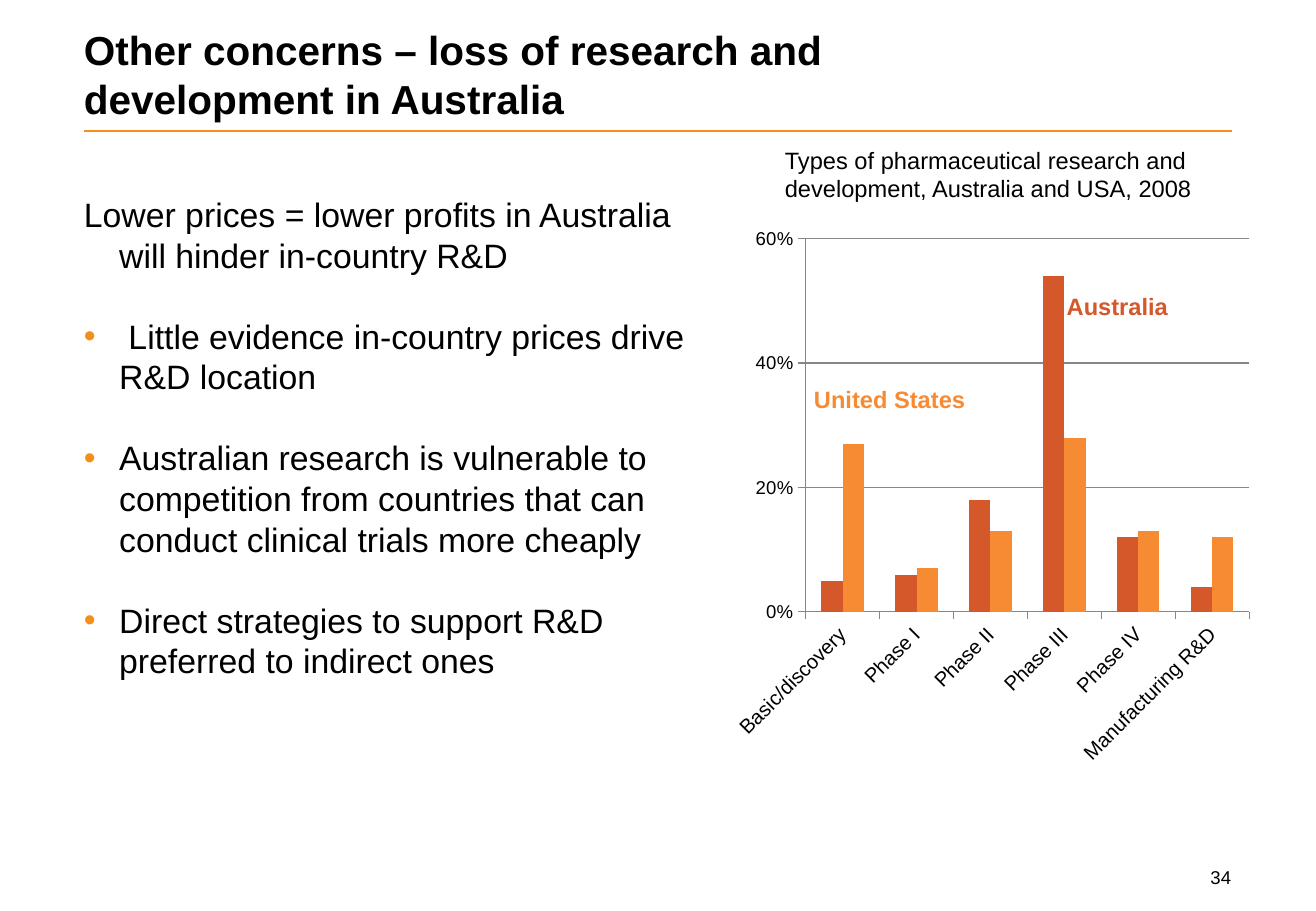
from dataclasses import dataclass

from lxml.etree import SubElement
from pptx import Presentation
from pptx.chart.data import CategoryChartData
from pptx.dml.color import RGBColor
from pptx.enum.chart import XL_CHART_TYPE, XL_TICK_MARK
from pptx.enum.shapes import MSO_CONNECTOR
from pptx.enum.text import MSO_ANCHOR, PP_ALIGN
from pptx.oxml.ns import qn
from pptx.slide import Slide
from pptx.text.text import TextFrame, _Paragraph
from pptx.util import Inches, Pt

FONT = "Arial"
BLACK = RGBColor(0x00, 0x00, 0x00)
GOLD = RGBColor(0xF3, 0x90, 0x1D)
RUST = RGBColor(0xD4, 0x58, 0x2A)
ORANGE = RGBColor(0xF6, 0x8B, 0x33)
GREY = RGBColor(0x87, 0x87, 0x87)

Box = tuple[float, float, float, float]


@dataclass(frozen=True)
class Label:
    text: str
    box: Box
    size: float = 14
    color: RGBColor = BLACK
    bold: bool = False
    align: PP_ALIGN = PP_ALIGN.LEFT


@dataclass(frozen=True)
class Country:
    name: str
    shares: tuple[float, ...]
    color: RGBColor


LABELS = [
    Label("34", (9.28, 7.08, 0.95, 0.29), size=11, align=PP_ALIGN.RIGHT),
    Label("Australia", (8.68, 2.35, 1.78, 0.41), color=RUST, bold=True),
    Label("United States", (6.6, 3.12, 1.78, 0.41), color=ORANGE, bold=True),
    Label("Types of pharmaceutical research and development, Australia and USA, 2008",
          (6.36, 1.15, 3.78, 0.57)),
]
LEAD = "Lower prices = lower profits in Australia will hinder in-country R&D"
BULLETS = [
    " Little evidence in-country prices drive R&D location",
    "Australian research is vulnerable to competition from countries that can "
    "conduct clinical trials more cheaply",
    "Direct strategies to support R&D preferred to indirect ones",
]
STAGES = ["Basic/discovery", "Phase I", "Phase II", "Phase III", "Phase IV",
          "Manufacturing R&D"]
COUNTRIES = [
    Country("Australia", (0.05, 0.06, 0.18, 0.54, 0.12, 0.04), RUST),
    Country("United States", (0.27, 0.07, 0.13, 0.28, 0.13, 0.12), ORANGE),
]


def inches(box: Box) -> list[Inches]:
    return [Inches(v) for v in box]


def write(p: _Paragraph, text: str, *, size: float, color: RGBColor = BLACK,
          bold: bool = False, align: PP_ALIGN = PP_ALIGN.LEFT) -> None:
    p.alignment = align
    r = p.add_run()
    r.text = text
    r.font.name = FONT
    r.font.size = Pt(size)
    r.font.bold = bold
    r.font.color.rgb = color


def set_margins(tf: TextFrame, left: float, top: float, right: float, bottom: float) -> None:
    tf.margin_left, tf.margin_top, tf.margin_right, tf.margin_bottom = inches(
        (left, top, right, bottom))


def add_text_frame(slide: Slide, box: Box) -> TextFrame:
    tf = slide.shapes.add_textbox(*inches(box)).text_frame
    tf.word_wrap = True
    return tf


def add_title(slide: Slide, text: str) -> None:
    sp = slide.shapes.title
    sp.left, sp.top, sp.width, sp.height = inches((0.69, 0.2, 7.56, 0.81))
    tf = sp.text_frame
    tf.word_wrap = True
    tf.vertical_anchor = MSO_ANCHOR.BOTTOM
    set_margins(tf, 0, 0, 0, 0)
    write(tf.paragraphs[0], text, size=24, bold=True)


def add_rule(slide: Slide) -> None:
    line = slide.shapes.add_connector(
        MSO_CONNECTOR.STRAIGHT, *inches((0.69, 1.08, 10.14, 1.08)))
    line.line.color.rgb = GOLD
    line.line.width = Pt(1.5)
    SubElement(line._element.spPr, qn("a:effectLst"))


def hang(p: _Paragraph, bullet: bool) -> None:
    """Give the paragraph a hanging indent and, if asked, a gold bullet."""
    pPr = p._p.get_or_add_pPr()
    pPr.set("marL", str(Inches(0.29)))
    pPr.set("indent", str(-Inches(0.29)))
    if bullet:
        color = SubElement(pPr, qn("a:buClr"))
        SubElement(color, qn("a:srgbClr"), val=str(GOLD))
        SubElement(pPr, qn("a:buFont"), typeface=FONT)
        SubElement(pPr, qn("a:buChar"), char="•")


def add_body(slide: Slide) -> None:
    tf = add_text_frame(slide, (0.69, 1.55, 5.12, 4.2))
    set_margins(tf, 0, 0.05, 0.1, 0.05)
    for i, text in enumerate([LEAD, *BULLETS]):
        p = tf.add_paragraph() if i else tf.paragraphs[0]
        hang(p, bullet=i > 0)
        p.line_spacing = Pt(24)
        if i:
            p.space_before = Pt(24)
        write(p, text, size=20)


def add_chart(slide: Slide) -> None:
    data = CategoryChartData(number_format="0%")
    data.categories = STAGES
    for country in COUNTRIES:
        data.add_series(country.name, country.shares)
    chart = slide.shapes.add_chart(
        XL_CHART_TYPE.COLUMN_CLUSTERED, *inches((5.97, 1.78, 4.4, 4.59)), data).chart
    chart.has_legend = False
    chart.has_title = False
    chart.font.name = FONT
    chart.font.size = Pt(10)
    chart.font.color.rgb = BLACK

    plot = chart.plots[0]
    plot.gap_width = 150
    plot.overlap = 0
    plot.vary_by_categories = False
    for series, country in zip(plot.series, COUNTRIES):
        series.format.fill.solid()
        series.format.fill.fore_color.rgb = country.color

    for axis, size in ((chart.category_axis, 12), (chart.value_axis, 11)):
        axis.major_tick_mark = XL_TICK_MARK.OUTSIDE
        axis.format.line.color.rgb = GREY
        font = axis.tick_labels.font
        font.name, font.size = FONT, Pt(size)
        font.color.rgb = BLACK
    chart.category_axis._element.txPr.bodyPr.set("rot", str(-45 * 60000))

    values = chart.value_axis
    values.minimum_scale, values.maximum_scale, values.major_unit = 0, 0.6, 0.2
    values.tick_labels.number_format = "0%"
    values.tick_labels.number_format_is_linked = False
    values.has_major_gridlines = True
    values.major_gridlines.format.line.color.rgb = GREY

    area = chart._chartSpace.chart.plotArea
    layout = area.find(qn("c:layout"))
    if layout is None:
        layout = SubElement(area, qn("c:layout"))
        area.insert(0, layout)
    manual = SubElement(layout, qn("c:manualLayout"))
    for tag, val in (("layoutTarget", "inner"), ("xMode", "edge"), ("yMode", "edge"),
                     ("x", "0.15"), ("y", "0.04"), ("w", "0.83"), ("h", "0.67")):
        SubElement(manual, qn(f"c:{tag}"), val=val)


def main() -> None:
    prs = Presentation()
    prs.slide_width, prs.slide_height = Inches(10.83), Inches(7.5)
    slide = prs.slides.add_slide(prs.slide_layouts[5])
    add_rule(slide)
    add_title(slide, "Other concerns – loss of research and development in Australia")
    add_body(slide)
    add_chart(slide)
    for label in LABELS:
        tf = add_text_frame(slide, label.box)
        write(tf.paragraphs[0], label.text, size=label.size, color=label.color,
              bold=label.bold, align=label.align)
    prs.save("out.pptx")


if __name__ == "__main__":
    main()
